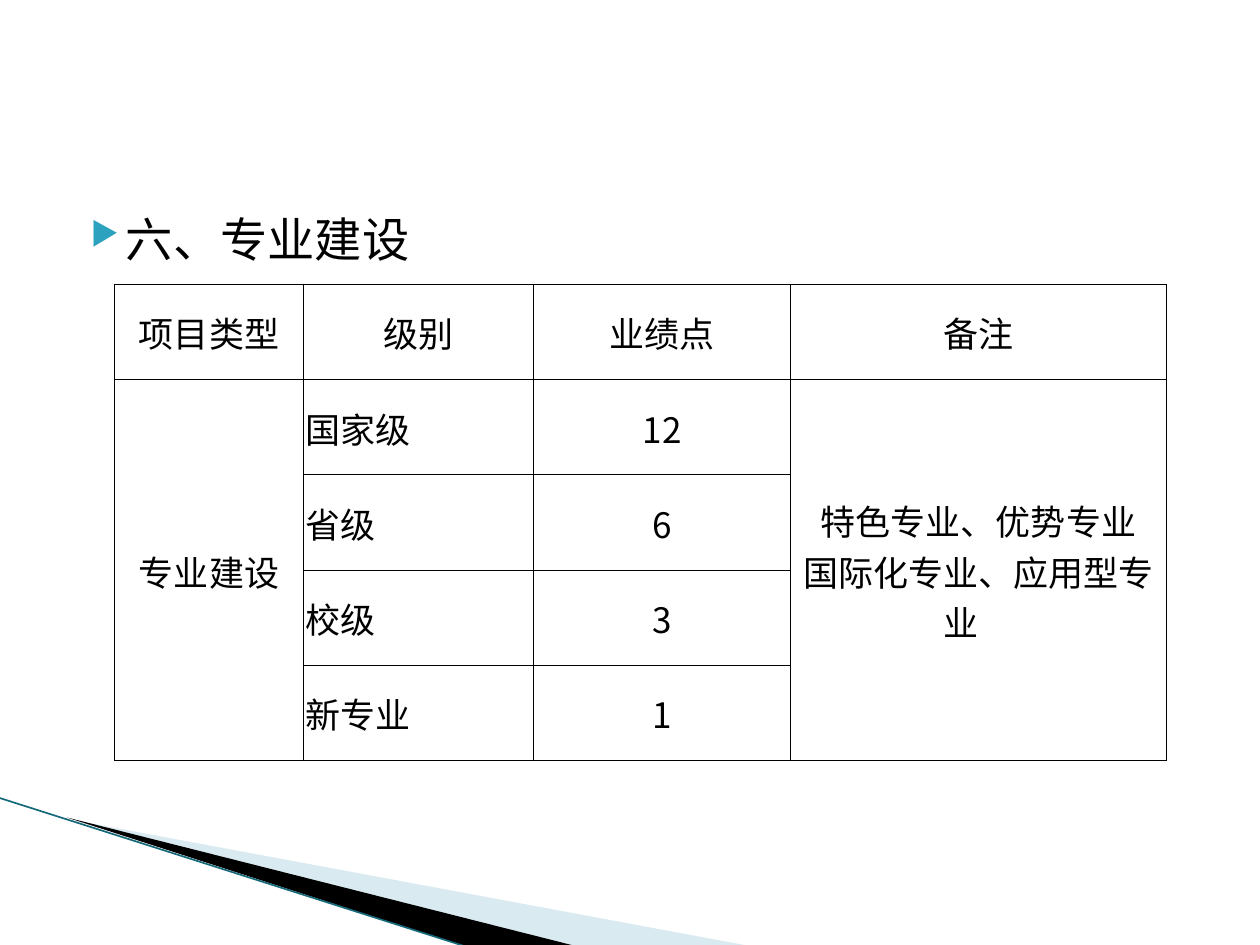
from lxml.etree import SubElement
from pptx import Presentation
from pptx.dml.color import RGBColor
from pptx.enum.text import MSO_ANCHOR, PP_ALIGN
from pptx.oxml import parse_xml
from pptx.oxml.ns import nsdecls, qn
from pptx.util import Cm, Pt


def rgb(code):
    return RGBColor.from_string(code)


class Deck:
    ink = "000000"
    font = "Noto Sans CJK SC"
    head = "DejaVu Sans Mono"

    def __init__(self):
        self.prs = Presentation()
        self.prs.slide_width, self.prs.slide_height = Cm(25.4), Cm(19.05)
        self.slide = self.prs.slides.add_slide(self.prs.slide_layouts[6])
        self.shapes = self.slide.shapes

    def style(self, para, size, name):
        """Set the Latin and East Asian font of a whole paragraph."""
        font = para.font
        font.size, font.name = Pt(size), name
        font.color.rgb = rgb(self.ink)
        east = SubElement(font._element, qn("a:ea"))
        east.set("typeface", self.font)

    def wedge(self, points, color, alpha=100):
        """Draw a filled outline through points given in cm."""
        start, *rest = [(Cm(x), Cm(y)) for x, y in points]
        build = self.shapes.build_freeform(*start)
        build.add_line_segments(rest, close=True)
        shape = build.convert_to_shape()
        shape.shadow.inherit = False
        shape.fill.solid()
        shape.fill.fore_color.rgb = rgb(color)
        shape.line.fill.background()
        tint = shape.fill._xPr.find(".//" + qn("a:srgbClr"))
        SubElement(tint, qn("a:alpha")).set("val", str(alpha * 1000))

    def line(self, x1, y1, x2, y2, color, width):
        line = self.shapes.add_connector(1, Cm(x1), Cm(y1), Cm(x2), Cm(y2))
        line.line.color.rgb = rgb(color)
        line.line.width = Pt(width)
        SubElement(line._element.spPr, qn("a:effectLst"))

    def bullet(self, text, x, y, w, h):
        frame = self.shapes.add_textbox(Cm(x), Cm(y), Cm(w), Cm(h)).text_frame
        frame.word_wrap = True
        para = frame.paragraphs[0]
        para.text = text
        props = para._p.get_or_add_pPr()
        props.set("marL", str(Cm(1.02)))
        props.set("indent", str(Cm(-0.71)))
        color = SubElement(props, qn("a:buClr"))
        SubElement(color, qn("a:srgbClr")).set("val", "2DA2BF")
        SubElement(props, qn("a:buSzPct")).set("val", "68000")
        SubElement(props, qn("a:buChar")).set("char", "▶")
        self.style(para, 27, self.head)

    def cell(self, cell, text, align):
        cell.margin_left = cell.margin_right = cell.margin_top = Cm(0.03)
        cell.margin_bottom = 0
        cell.vertical_anchor = MSO_ANCHOR.MIDDLE
        cell.fill.background()
        for spot, side in enumerate("LRTB"):
            cell._tc.tcPr.insert(spot, parse_xml(
                f'<a:ln{side} {nsdecls("a")} w="{Pt(0.5)}"><a:solidFill>'
                f'<a:srgbClr val="{self.ink}"/></a:solidFill></a:ln{side}>'))
        cell.text = text
        for para in cell.text_frame.paragraphs:
            para.alignment = align
            self.style(para, 20, self.font)

    def table(self, rows, widths, height, x, y, merges):
        table = self.shapes.add_table(
            len(rows), len(widths), Cm(x), Cm(y),
            Cm(sum(widths)), Cm(height * len(rows))).table
        table.first_row = table.horz_banding = False
        for col, width in zip(table.columns, widths):
            col.width = Cm(width)
        for r, row in enumerate(rows):
            table.rows[r].height = Cm(height)
            for c, text in enumerate(row):
                left = r > 0 and c == 1
                align = PP_ALIGN.LEFT if left else PP_ALIGN.CENTER
                self.cell(table.cell(r, c), text, align)
        for first, last in merges:
            table.cell(*first).merge(table.cell(*last))


def main():
    deck = Deck()
    deck.wedge([(1.4, 16.52), (15.11, 19.07), (11.58, 19.07)], "A0CBDC", 40)
    deck.wedge([(1.35, 16.48), (11.6, 19.07), (9.45, 19.1)], "000000")
    deck.line(-0.03, 16.08, 9.45, 19.1, "16697A", 0.95)
    deck.bullet("六、专业建设", 1.27, 4.11, 22.86, 12.57)
    note = "特色专业、优势专业\n国际化专业、应用型专业　"
    rows = [
        ("项目类型", "级别", "业绩点", "备注"),
        ("专业建设", "国家级", "12", note),
        ("", "省级", "6", ""),
        ("", "校级", "3", ""),
        ("", "新专业", "1", ""),
    ]
    merges = [((1, c), (4, c)) for c in (0, 3)]
    deck.table(rows, (3.81, 4.64, 5.18, 7.57), 1.92, 2.31, 5.73, merges)
    deck.prs.save("out.pptx")


if __name__ == "__main__":
    main()
